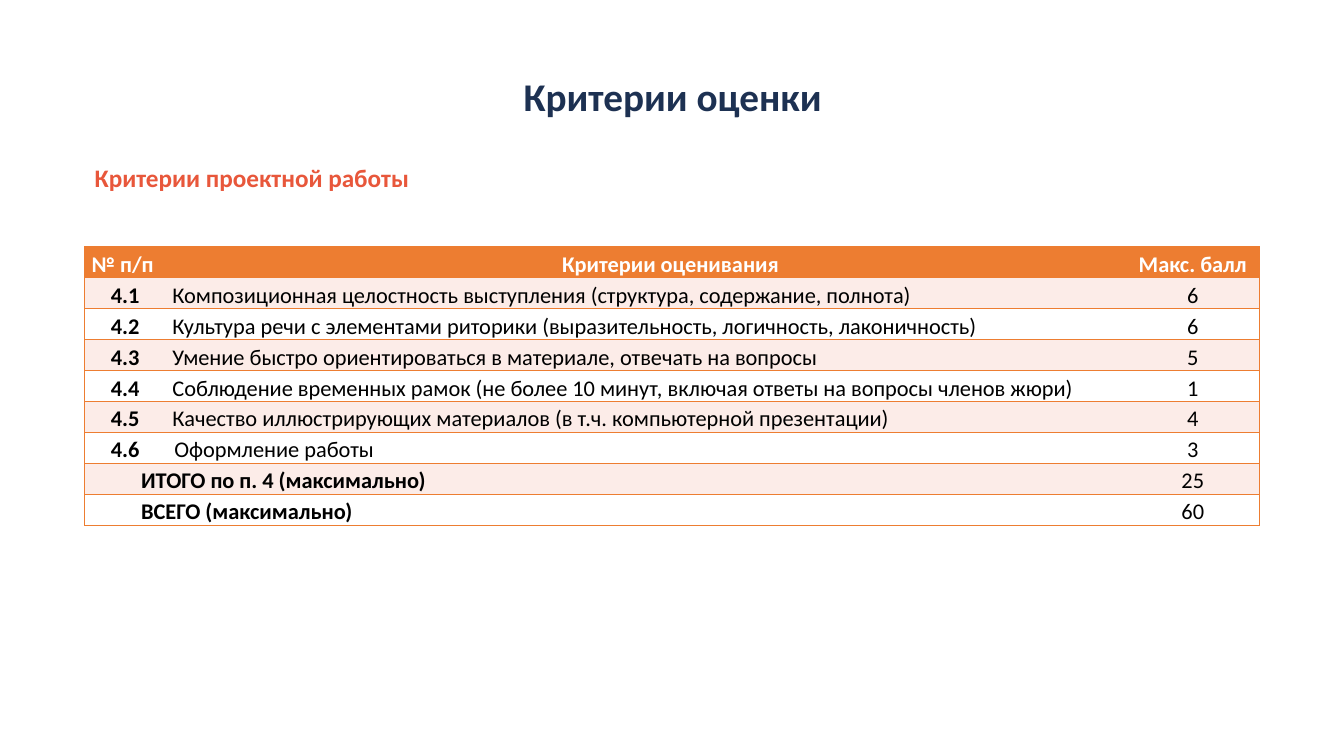
from lxml import etree
from pptx import Presentation
from pptx.dml.color import RGBColor
from pptx.enum.text import MSO_ANCHOR, PP_ALIGN
from pptx.oxml.ns import qn
from pptx.util import Inches, Pt

LEFT, CENTER, JUST = PP_ALIGN.LEFT, PP_ALIGN.CENTER, PP_ALIGN.JUSTIFY
TOP, MIDDLE = MSO_ANCHOR.TOP, MSO_ANCHOR.MIDDLE
ORANGE, WHITE, PINK, BLACK = "ED7D31", "FFFFFF", "FCECE8", "000000"
NAVY, CORAL = "1D3152", "E8573B"
SIDE, WIDTH = 0.84, 11.66
COLS = [0.8, 9.53, 1.32]
HEAD = ["№ п/п", "Критерии оценивания", "Макс. балл"]
ITEMS = [
    ("4.1", "Композиционная целостность выступления (структура, содержание, полнота)", "6"),
    ("4.2", "Культура речи с элементами риторики (выразительность, логичность, лаконичность)", "6"),
    ("4.3", "Умение быстро ориентироваться в материале, отвечать на вопросы", "5"),
    ("4.4", "Соблюдение временных рамок (не более 10 минут, включая ответы на вопросы членов жюри)", "1"),
    ("4.5", "Качество иллюстрирующих материалов (в т.ч. компьютерной презентации)", "4"),
    ("4.6", "Оформление работы", "3"),
]
TOTALS = [("ИТОГО по п. 4 (максимально)", "25"), ("ВСЕГО (максимально)", "60")]


def color(code):
    """Turn a hex string into a colour."""
    return RGBColor.from_string(code)


def write(frame, text, size=16, ink=BLACK, bold=False, align=LEFT, space=1.15, indent=0):
    """Put one formatted paragraph into a text frame."""
    para = frame.paragraphs[0]
    para.alignment = align
    para.line_spacing = space
    if indent:
        props = para._p.get_or_add_pPr()
        props.set("marL", "0")
        props.set("indent", str(Inches(indent)))
    run = para.add_run()
    run.text = text
    font = run.font
    font.name, font.size, font.bold = "Calibri", Pt(size), bold
    font.color.rgb = color(ink)


def label(slide, text, top, height, pad=(0.1, 0.05), anchor=TOP, **style):
    """Add a full-width text box."""
    box = slide.shapes.add_textbox(Inches(SIDE), Inches(top), Inches(WIDTH), Inches(height))
    frame = box.text_frame
    frame.word_wrap = True
    frame.vertical_anchor = anchor
    frame.margin_left = frame.margin_right = Inches(pad[0])
    frame.margin_top = frame.margin_bottom = Inches(pad[1])
    write(frame, text, **style)


def border(cell, sides):
    """Draw the named cell sides and clear the others."""
    props = cell._tc.get_or_add_tcPr()
    for place, side in enumerate("LRTB"):
        line = etree.Element(qn(f"a:ln{side}"), w=str(Pt(1)))
        if side in sides:
            fill = etree.SubElement(line, qn("a:solidFill"))
            etree.SubElement(fill, qn("a:srgbClr"), val=ORANGE)
        else:
            etree.SubElement(line, qn("a:noFill"))
        props.insert(place, line)


def fill_cell(cell, text, back, sides, **style):
    """Fill, frame and label one table cell."""
    cell.margin_left = cell.margin_right = Inches(0.07)
    cell.margin_top = cell.margin_bottom = 0
    cell.fill.solid()
    cell.fill.fore_color.rgb = color(back)
    border(cell, sides)
    if text:
        write(cell.text_frame, text, **style)


def fill_row(table, row, texts, back, styles):
    """Fill a table row, with lines on its outer sides only."""
    for col, (text, style) in enumerate(zip(texts, styles)):
        sides = ("LTB", "TB", "RTB")[col]
        fill_cell(table.cell(row, col), text, back, sides, **style)


def add_grid(slide):
    """Add the table of criteria with its totals."""
    count = 1 + len(ITEMS) + len(TOTALS)
    shape = slide.shapes.add_table(
        count, len(COLS), Inches(SIDE), Inches(2.45), Inches(WIDTH), Inches(2.6))
    table = shape.table
    for column, width in zip(table.columns, COLS):
        column.width = Inches(width)

    head = dict(ink=WHITE, bold=True)
    fill_row(table, 0, HEAD, ORANGE,
             [head, dict(head, align=CENTER, indent=0.49), dict(head, align=CENTER)])

    score = dict(align=CENTER)
    body = [dict(align=CENTER, bold=True), dict(align=JUST), score]
    last = [dict(bold=True, indent=0.49), {}, score]
    rows = [(item, body) for item in ITEMS]
    rows += [((name, "", points), last) for name, points in TOTALS]
    for row, (texts, styles) in enumerate(rows, 1):
        if styles is last:
            table.cell(row, 0).merge(table.cell(row, 1))
        if texts == ITEMS[-1]:
            styles = [body[0], dict(body[1], indent=0.02), score]
        fill_row(table, row, texts, PINK if row % 2 else WHITE, styles)


def main():
    """Build the slide and save it."""
    deck = Presentation()
    deck.slide_width, deck.slide_height = Inches(13.33), Inches(7.5)
    slide = deck.slides.add_slide(deck.slide_layouts[6])
    label(slide, "Критерии оценки", 0.64, 0.63, pad=(0.05, 0.05), anchor=MIDDLE,
          size=28, ink=NAVY, bold=True, align=CENTER, space=1.0)
    label(slide, "Критерии проектной работы", 1.52, 0.43, size=18, ink=CORAL, bold=True)
    add_grid(slide)
    deck.save("out.pptx")


if __name__ == "__main__":
    main()
